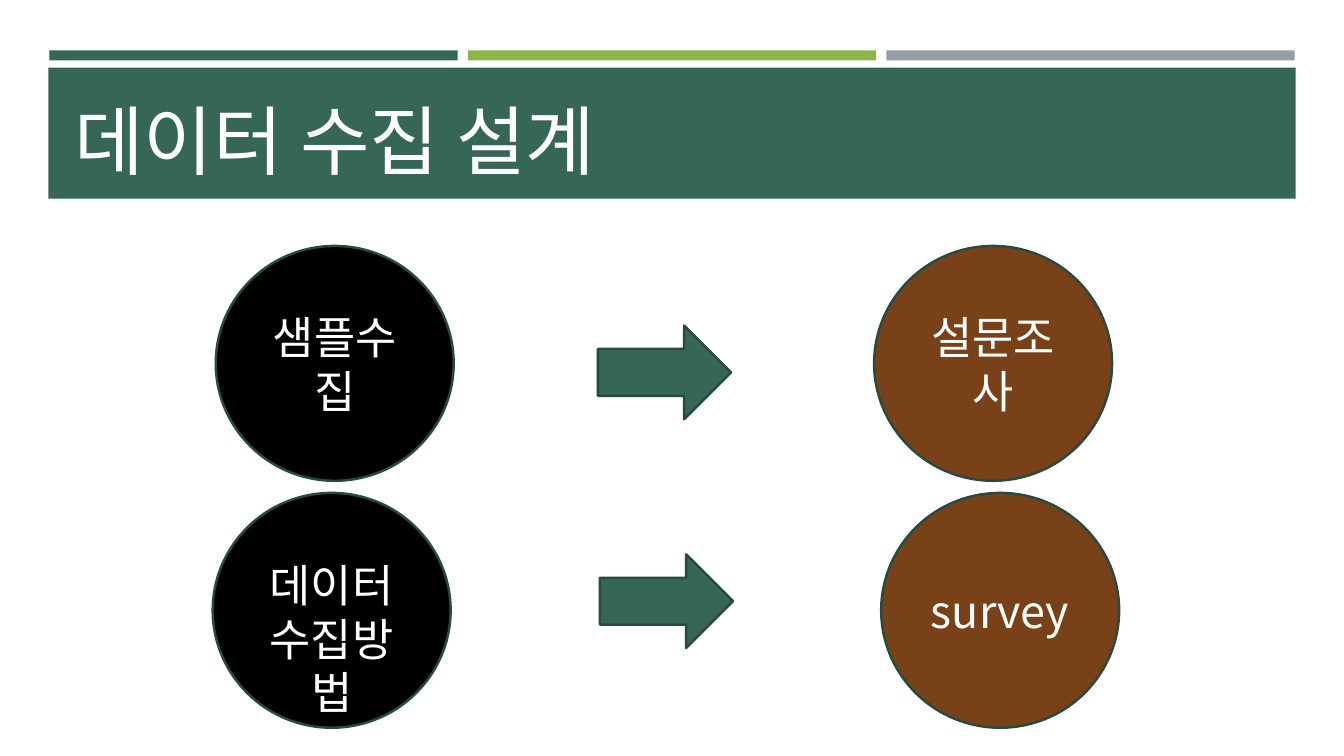
from dataclasses import dataclass

from lxml import etree
from pptx import Presentation
from pptx.dml.color import RGBColor
from pptx.enum import shapes, text
from pptx.oxml import ns
from pptx.util import Inches, Pt

FONT = "Noto Sans CJK KR"
GREEN = RGBColor(0x36, 0x66, 0x58)
DARK_GREEN = RGBColor(0x28, 0x4B, 0x41)
LIME = RGBColor(0x8C, 0xB6, 0x4A)
GREY = RGBColor(0x96, 0x9F, 0xA7)
BROWN = RGBColor(0x79, 0x41, 0x17)
BLACK = RGBColor(0, 0, 0)
WHITE = RGBColor(255, 255, 255)

RECTANGLE = shapes.MSO_SHAPE.RECTANGLE
OVAL = shapes.MSO_SHAPE.OVAL
ARROW = shapes.MSO_SHAPE.RIGHT_ARROW
MIDDLE = text.MSO_ANCHOR.MIDDLE
TOP = text.MSO_ANCHOR.TOP
BOTTOM = text.MSO_ANCHOR.BOTTOM


@dataclass
class Circle:
    left: float
    top: float
    fill: RGBColor
    label: str
    anchor: text.MSO_ANCHOR = MIDDLE
    inset_top: float = 0.05


@dataclass
class Arrow:
    left: float
    top: float


CIRCLES = [
    Circle(2.14, 2.44, BLACK, "샘플수집"),
    Circle(8.67, 2.44, BROWN, "설문조사"),
    Circle(2.11, 4.89, BLACK, "데이터 수집방법", TOP, 0.3),
    Circle(8.74, 4.89, BROWN, "survey"),
]
ARROWS = [Arrow(5.93, 3.23), Arrow(5.95, 5.5)]


def add_block(slide, kind, left: float, top: float, width: float,
              height: float, fill: RGBColor, outlined: bool = False):
    shape = slide.shapes.add_shape(
        kind, Inches(left), Inches(top), Inches(width), Inches(height))
    shape.shadow.inherit = False
    shape.fill.solid()
    shape.fill.fore_color.rgb = fill
    if outlined:
        shape.line.color.rgb = DARK_GREEN
        shape.line.width = Pt(1.75)
    else:
        shape.line.fill.background()
    return shape


def write_text(shape, label: str, size: int, alignment, anchor,
               inset_top: float = 0.05) -> None:
    frame = shape.text_frame
    frame_format = {"word_wrap": True, "vertical_anchor": anchor,
                    "margin_top": Inches(inset_top)}
    for name, value in frame_format.items():
        setattr(frame, name, value)
    paragraph = frame.paragraphs[0]
    paragraph.alignment = alignment
    run = paragraph.add_run()
    run.text = label
    for name, value in {"name": FONT, "size": Pt(size)}.items():
        setattr(run.font, name, value)
    run.font.color.rgb = WHITE
    east_asian = etree.SubElement(run.font._element, ns.qn("a:ea"))
    east_asian.set("typeface", FONT)


def add_header(slide) -> None:
    for column, color in enumerate((GREEN, LIME, GREY)):
        add_block(slide, RECTANGLE, 0.49 + 4.15 * column, 0.5, 4.05, 0.1, color)
    add_block(slide, RECTANGLE, 0.48, 0.67, 12.37, 1.3, GREEN)
    title = slide.shapes.add_textbox(
        Inches(0.64), Inches(0.77), Inches(12.06), Inches(1.11))
    write_text(title, "데이터 수집 설계", 54, text.PP_ALIGN.LEFT, BOTTOM)


def main() -> None:
    presentation = Presentation()
    presentation.slide_width = Inches(13.33)
    presentation.slide_height = Inches(7.5)
    slide = presentation.slides.add_slide(presentation.slide_layouts[6])
    add_header(slide)
    for circle in CIRCLES:
        shape = add_block(slide, OVAL, circle.left, circle.top, 2.36, 2.33,
                          circle.fill, outlined=True)
        write_text(shape, circle.label, 32, text.PP_ALIGN.CENTER,
                   circle.anchor, circle.inset_top)
    for arrow in ARROWS:
        add_block(slide, ARROW, arrow.left, arrow.top, 1.32, 0.93, GREEN,
                  outlined=True)
    presentation.save("out.pptx")


if __name__ == "__main__":
    main()
